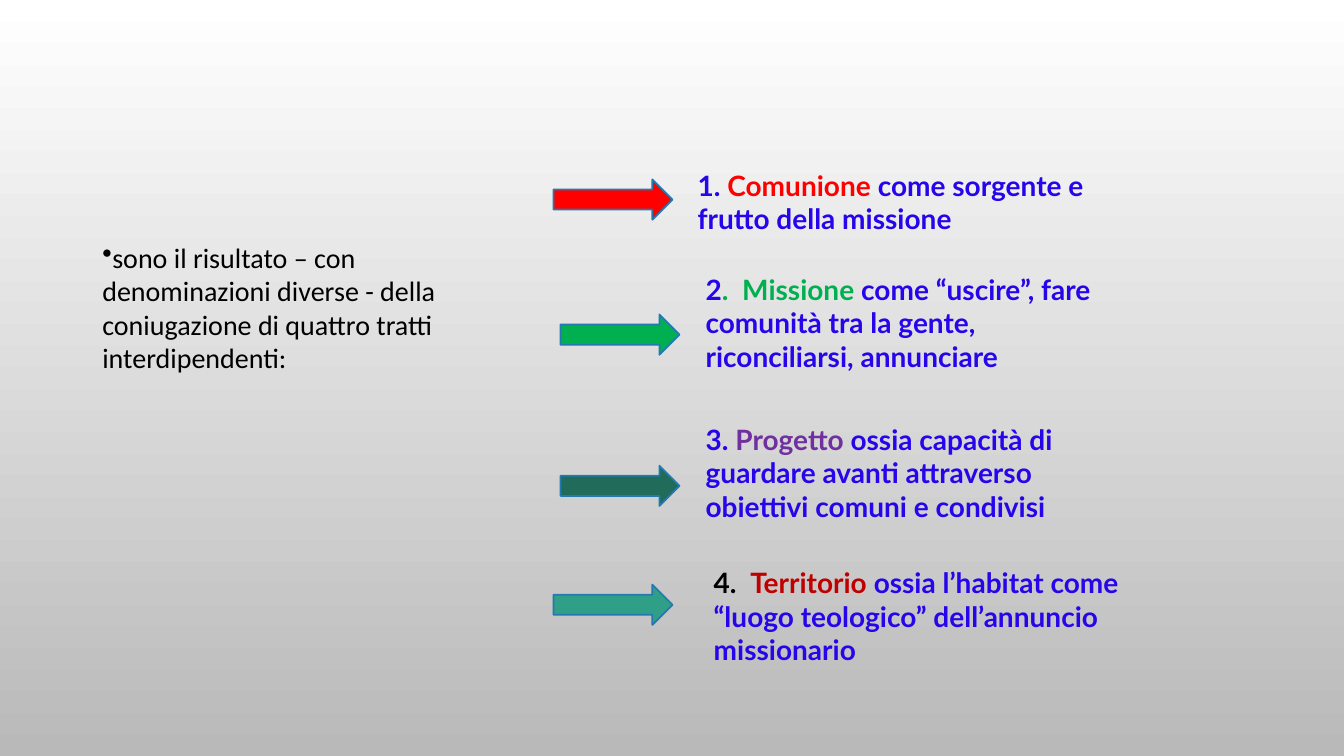
from lxml import etree
from pptx import Presentation
from pptx import util as u
from pptx.dml.color import RGBColor
from pptx.enum import shapes, text
from pptx.oxml.ns import qn

HUES = {
    "white": "FFFFFF", "gray": "B9B9B9", "black": "000000",
    "blue": "2605EB", "red": "FF0000", "green": "00B050",
    "purple": "7030A0", "brick": "C00000", "pine": "206B5A",
    "teal": "2FA087", "edge": "2379B0",
}

deck = Presentation()
deck.slide_width = u.Inches(13.33)
deck.slide_height = u.Inches(7.5)
slide = deck.slides.add_slide(deck.slide_layouts[6])
cell = deck.slide_height / 90


def hue(name):
    return RGBColor.from_string(HUES[name])


def write(box, font, bold, runs):
    left, top, wide, high = [round(n * cell) for n in box]
    frame = slide.shapes.add_textbox(left, top, wide, high).text_frame
    frame.word_wrap = True
    frame.vertical_anchor = text.MSO_ANCHOR.TOP
    para = frame.paragraphs[0]
    for words, tint in runs:
        run = para.add_run()
        run.text = words
        run.font.name = font
        run.font.size = u.Pt(20)
        run.font.bold = bold
        run.font.color.rgb = hue(tint)
    return para


back = slide.background.fill
back.gradient()
back.gradient_angle = 270
for stop, spot, tint in zip(back.gradient_stops, (0, 1), ("white", "gray")):
    stop.position = spot
    stop.color.rgb = hue(tint)

intro = write((11, 28, 44.4, 43.4), "Calibri", False, [
    ("sono il risultato – con denominazioni diverse - della "
     "coniugazione di quattro tratti interdipendenti:", "black"),
])
props = intro._p.get_or_add_pPr()
props.set("marL", "0")
props.set("indent", "0")
etree.SubElement(props, qn("a:buChar")).set("char", "•")

traits = [
    (81.84, 19.44, 52, 9.24, 65.88, 21.36, "red", [
        ("1. ", "blue"), ("Comunione ", "red"),
        ("come sorgente e frutto della missione", "blue")]),
    (82.8, 31.8, 52, 13.32, 66.72, 37.44, "green", [
        ("2", "blue"), (".  Missione ", "green"),
        ("come “uscire”, fare comunità tra la gente, "
         "riconciliarsi, annunciare", "blue")]),
    (82.8, 49.68, 53.88, 13.32, 66.72, 55.44, "pine", [
        ("3. ", "blue"), ("Progetto ", "purple"),
        ("ossia capacità di guardare avanti attraverso "
         "obiettivi comuni e condivisi", "blue")]),
    (83.76, 66.72, 52, 13.32, 65.88, 69.6, "teal", [
        ("4.  ", "black"), ("Territorio ", "brick"),
        ("ossia l’habitat come “luogo teologico” "
         "dell’annuncio missionario", "blue")]),
]

for left, top, wide, high, start, level, tint, runs in traits:
    write((left, top, wide, high), "Lato", True, runs)
    arrow = slide.shapes.add_shape(
        shapes.MSO_SHAPE.RIGHT_ARROW,
        *[round(n * cell) for n in (start, level, 14.16, 4.8)])
    arrow.shadow.inherit = False
    arrow.fill.solid()
    arrow.fill.fore_color.rgb = hue(tint)
    arrow.line.color.rgb = hue("edge")
    arrow.line.width = u.Pt(1.25)

deck.save("out.pptx")
